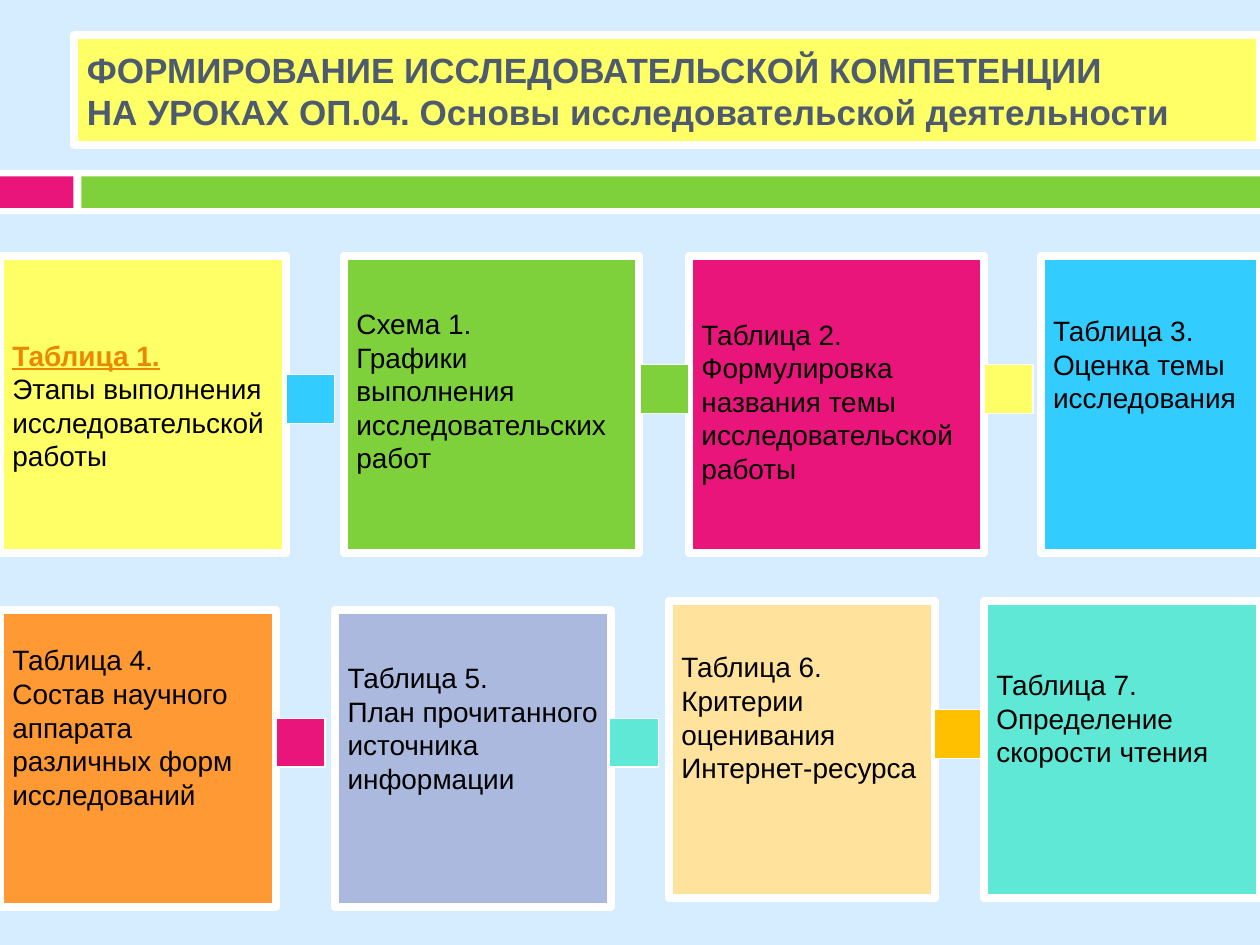
from dataclasses import dataclass

from pptx import Presentation
from pptx.dml.color import RGBColor
from pptx.enum.shapes import MSO_SHAPE
from pptx.enum.text import MSO_ANCHOR, MSO_AUTO_SIZE, PP_ALIGN
from pptx.util import Pt


@dataclass(frozen=True)
class Theme:
    font: str = "Arial"
    title_size: float = 20
    card_size: float = 16
    line_spacing: float = 1.0
    card_border: float = 4.5
    link_border: float = 0.75
    background: str = "D6ECFF"
    white: str = "FFFFFF"
    black: str = "000000"
    slate: str = "4E5B6F"
    reference: str = "EB8803"
    yellow: str = "FFFF66"
    green: str = "7FD13B"
    pink: str = "EA157A"
    blue: str = "33CCFF"
    orange: str = "FF9933"
    lavender: str = "ABB9DE"
    cream: str = "FFE39D"
    amber: str = "FFC000"
    turquoise: str = "5FE8D6"


THEME = Theme()
LINK_SIDE = 28
CARD_HEIGHT = 170

# Card: left, top offset, width, colour, space above the text, paragraphs
TOP_CARDS = [
    (0, 0, 163.4, THEME.yellow, 47,
     ["Таблица 1.", "Этапы выполнения исследовательской работы"]),
    (196.6, 0, 168.5, THEME.green, 29,
     ["Схема 1.", "Графики выполнения исследовательских работ"]),
    (393.8, 0, 168.5, THEME.pink, 35,
     ["Таблица 2.", "Формулировка названия темы исследовательской работы"]),
    (594.7, 0, 125.3, THEME.blue, 33,
     ["Таблица 3.", "Оценка темы исследования"]),
]
BOTTOM_CARDS = [
    (0, 5, 157.7, THEME.orange, 19,
     ["Таблица 4.", "Состав научного аппарата различных форм исследований"]),
    (191.5, 5, 157.7, THEME.lavender, 29,
     ["Таблица 5.", "План прочитанного источника информации"]),
    (382.3, 0, 151.9, THEME.cream, 28,
     ["Таблица 6. Критерии оценивания Интернет-ресурса"]),
    (562.3, 0, 157.7, THEME.turquoise, 38,
     ["Таблица 7. Определение скорости чтения"]),
]
# Link: left, top offset, colour
TOP_LINKS = [(163.4, 67.7, THEME.blue), (365.8, 62, THEME.green),
             (562.3, 62, THEME.yellow)]
BOTTOM_LINKS = [(157.7, 67, THEME.pink), (348.5, 67, THEME.turquoise),
                (534.2, 62, THEME.amber)]


def set_all(target, values):
    for name, value in values.items():
        setattr(target, name, value)


def paint(shape, fill, border=0):
    shape.fill.solid()
    shape.fill.fore_color.rgb = RGBColor.from_string(fill)
    if border:
        shape.line.color.rgb = RGBColor.from_string(THEME.white)
        shape.line.width = Pt(border)
    else:
        shape.line.fill.background()


def add_block(slide, left, top, width, height, fill, border=0):
    block = slide.shapes.add_shape(
        MSO_SHAPE.RECTANGLE, Pt(left), Pt(top), Pt(width), Pt(height))
    block.shadow.inherit = False
    paint(block, fill, border)
    return block


def write(frame, lines, size, color, anchor, bold=False, top_margin=3.6):
    set_all(frame, {
        "word_wrap": True, "auto_size": MSO_AUTO_SIZE.NONE,
        "vertical_anchor": anchor, "margin_top": Pt(top_margin),
        "margin_bottom": Pt(3.6), "margin_left": Pt(7.2),
        "margin_right": Pt(7.2)})
    for index, line in enumerate(lines):
        paragraph = frame.add_paragraph() if index else frame.paragraphs[0]
        set_all(paragraph, {
            "alignment": PP_ALIGN.LEFT, "line_spacing": THEME.line_spacing,
            "space_before": Pt(0), "space_after": Pt(0)})
        run = paragraph.add_run()
        run.text = line
        set_all(run.font, {"name": THEME.font, "size": Pt(size), "bold": bold})
        run.font.color.rgb = RGBColor.from_string(color)


def place_title(slide, left, top, width, height):
    title = slide.shapes.title
    set_all(title, {"left": Pt(left), "top": Pt(top),
                    "width": Pt(width), "height": Pt(height)})
    paint(title, THEME.yellow, THEME.card_border)
    write(title.text_frame,
          ["ФОРМИРОВАНИЕ ИССЛЕДОВАТЕЛЬСКОЙ КОМПЕТЕНЦИИ",
           "НА УРОКАХ ОП.04. Основы исследовательской деятельности"],
          THEME.title_size, THEME.slate, MSO_ANCHOR.MIDDLE, bold=True)


def add_divider(slide, left, top, width, height):
    """White band holding a short pink bar and a long green one."""
    inset, pink_width, green_start = 3.6, 42, 46.5
    bar_top, bar_height = top + inset, height - 2 * inset
    add_block(slide, left, top, width, height, THEME.white)
    add_block(slide, left, bar_top, pink_width, bar_height, THEME.pink)
    add_block(slide, left + green_start, bar_top, width - green_start,
              bar_height, THEME.green)


def add_card(slide, left, top, width, fill, space_above, lines):
    card = add_block(slide, left, top, width, CARD_HEIGHT, fill,
                     THEME.card_border)
    write(card.text_frame, lines, THEME.card_size, THEME.black,
          MSO_ANCHOR.TOP, top_margin=space_above)
    return card


def add_card_row(slide, left, top, cards, links):
    """Links lie over the cards, except for the last card. Returns the cards."""
    def place(card):
        x, y, *rest = card
        return add_card(slide, left + x, top + y, *rest)

    placed = [place(card) for card in cards[:-1]]
    for x, y, fill in links:
        add_block(slide, left + x, top + y, LINK_SIDE, LINK_SIDE, fill,
                  THEME.link_border)
    return placed + [place(cards[-1])]


def mark_reference(card):
    heading = card.text_frame.paragraphs[0].runs[0].font
    set_all(heading, {"bold": True, "underline": True})
    heading.color.rgb = RGBColor.from_string(THEME.reference)


def main():
    deck = Presentation()
    set_all(deck, {"slide_width": Pt(720), "slide_height": Pt(540)})
    slide = deck.slides.add_slide(deck.slide_layouts[5])
    slide.background.fill.solid()
    slide.background.fill.fore_color.rgb = RGBColor.from_string(
        THEME.background)

    add_divider(slide, 0, 97.2, 720, 25.2)
    place_title(slide, 42.5, 20.2, 677.5, 62.6)
    top_row = add_card_row(slide, 0, 146.2, TOP_CARDS, TOP_LINKS)
    mark_reference(top_row[0])
    add_card_row(slide, 0, 343.4, BOTTOM_CARDS, BOTTOM_LINKS)
    deck.save("out.pptx")


if __name__ == "__main__":
    main()
